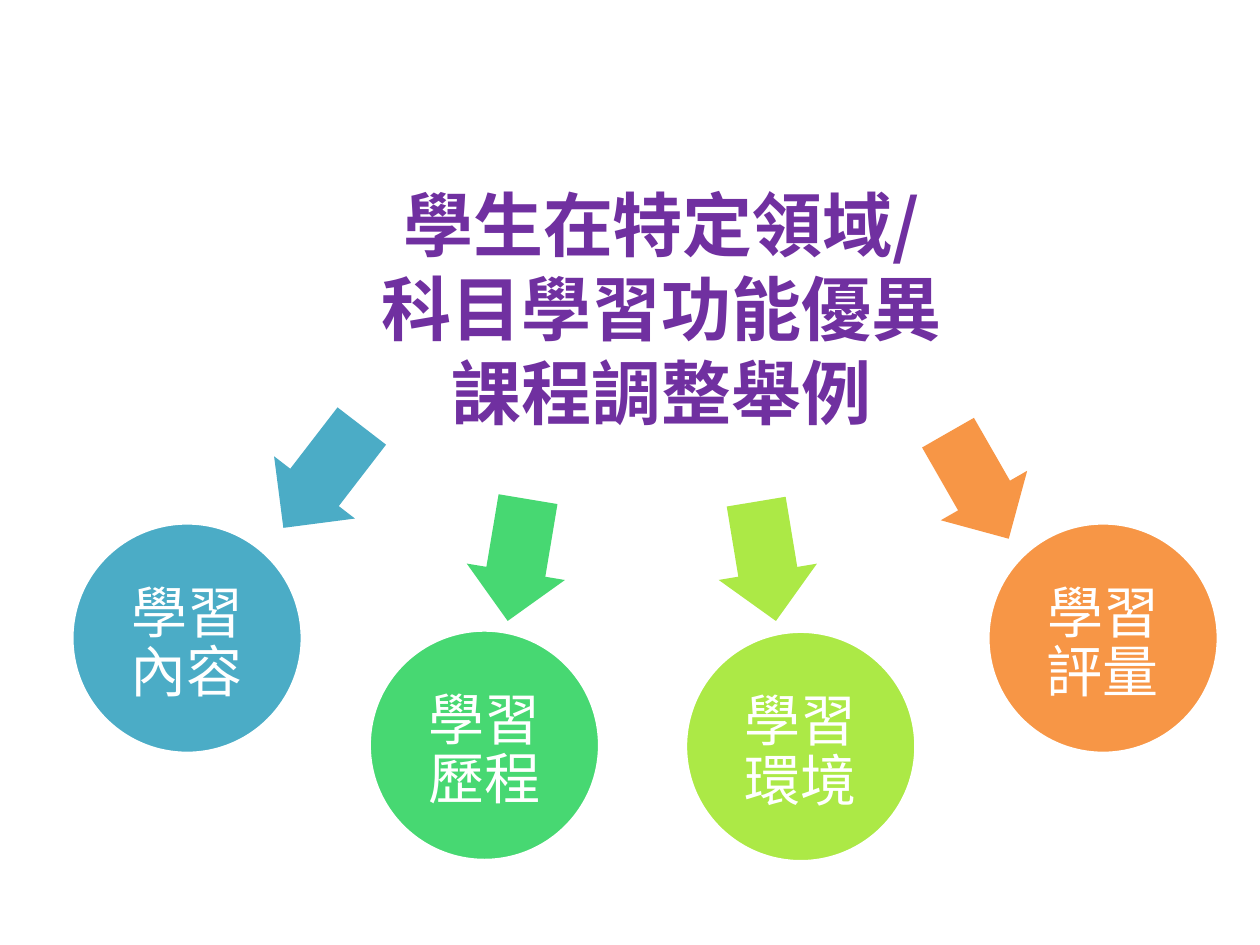
"""Build a slide with a title and four arrows leading to coloured circles."""
import pptx
import pptx.dml.color
import pptx.enum.shapes
import pptx.enum.text
import pptx.util
from lxml import etree
from pptx.util import Inches, Pt

THEME = {
    "font": "Noto Sans CJK SC",
    "title": "7030A0",
    "light": "FFFFFF",
    "title_size": 40,
    "label_size": 32,
    "title_pitch": 48,
    "label_pitch": 34,
}
DIAMETER = 1.83
TITLE_LINES = ["學生在特定領域/", "科目學習功能優異", "課程調整舉例"]
TOPICS = [
    ("學習內容", "4BACC6", (0.57, 4.15), (2.05, 3.38, 1.02, 0.81), 127.6),
    ("學習歷程", "47D872", (2.93, 5), (3.62, 4.05, 0.98, 0.79), 99.5),
    ("學習環境", "ACE946", (5.44, 5.01), (5.6, 4.06, 0.96, 0.79), 80.6),
    ("學習評量", "F79646", (7.84, 4.15), (7.28, 3.46, 0.97, 0.79), 60.2),
]


def add_run(p, text, size, color, bold=False):
    r = p.add_run()
    r.text = text
    r.font.name = THEME["font"]
    r.font.size = Pt(size)
    r.font.bold = bold
    r.font.color.rgb = pptx.dml.color.RGBColor.from_string(color)
    ea = etree.SubElement(r.font._element, pptx.oxml.ns.qn("a:ea"))
    ea.set("typeface", THEME["font"])


def add_filled(s, kind, box, color):
    sp = s.shapes.add_shape(kind, *map(Inches, box))
    sp.shadow.inherit = False
    sp.fill.solid()
    sp.fill.fore_color.rgb = pptx.dml.color.RGBColor.from_string(color)
    sp.line.fill.background()
    return sp


prs = pptx.Presentation()
prs.slide_width, prs.slide_height = Inches(10), Inches(7.5)
s = prs.slides.add_slide(prs.slide_layouts[5])

title = s.shapes.title
title.left, title.top = Inches(2.56), Inches(1.35)
title.width, title.height = Inches(5.38), Inches(0.94)
tf = title.text_frame
tf.word_wrap = True
tf.auto_size = pptx.enum.text.MSO_AUTO_SIZE.NONE
tf.vertical_anchor = pptx.enum.text.MSO_ANCHOR.TOP
tf.margin_top = Inches(0.09)
p = tf.paragraphs[0]
p.alignment = pptx.enum.text.PP_ALIGN.CENTER
p.line_spacing = Pt(THEME["title_pitch"])
for i, line in enumerate(TITLE_LINES):
    if i:
        p.add_line_break()
    add_run(p, line, THEME["title_size"], THEME["title"], bold=True)

for label, color, corner, arrow_box, angle in TOPICS:
    arrow = add_filled(s, pptx.enum.shapes.MSO_SHAPE.RIGHT_ARROW, arrow_box, color)
    arrow.adjustments[0] = 0.6
    arrow.adjustments[1] = 0.5
    arrow.rotation = angle

    circle = add_filled(s, pptx.enum.shapes.MSO_SHAPE.OVAL, (*corner, DIAMETER, DIAMETER), color)
    circle.line.color.rgb = pptx.dml.color.RGBColor.from_string(THEME["light"])
    circle.line.width = Pt(2)
    tf = circle.text_frame
    tf.word_wrap = True
    tf.vertical_anchor = pptx.enum.text.MSO_ANCHOR.MIDDLE
    tf.margin_left = tf.margin_right = tf.margin_bottom = Inches(0.04)
    tf.margin_top = Inches(0.14)
    p = tf.paragraphs[0]
    p.alignment = pptx.enum.text.PP_ALIGN.CENTER
    p.line_spacing = Pt(THEME["label_pitch"])
    add_run(p, label, THEME["label_size"], THEME["light"])

prs.save("out.pptx")
